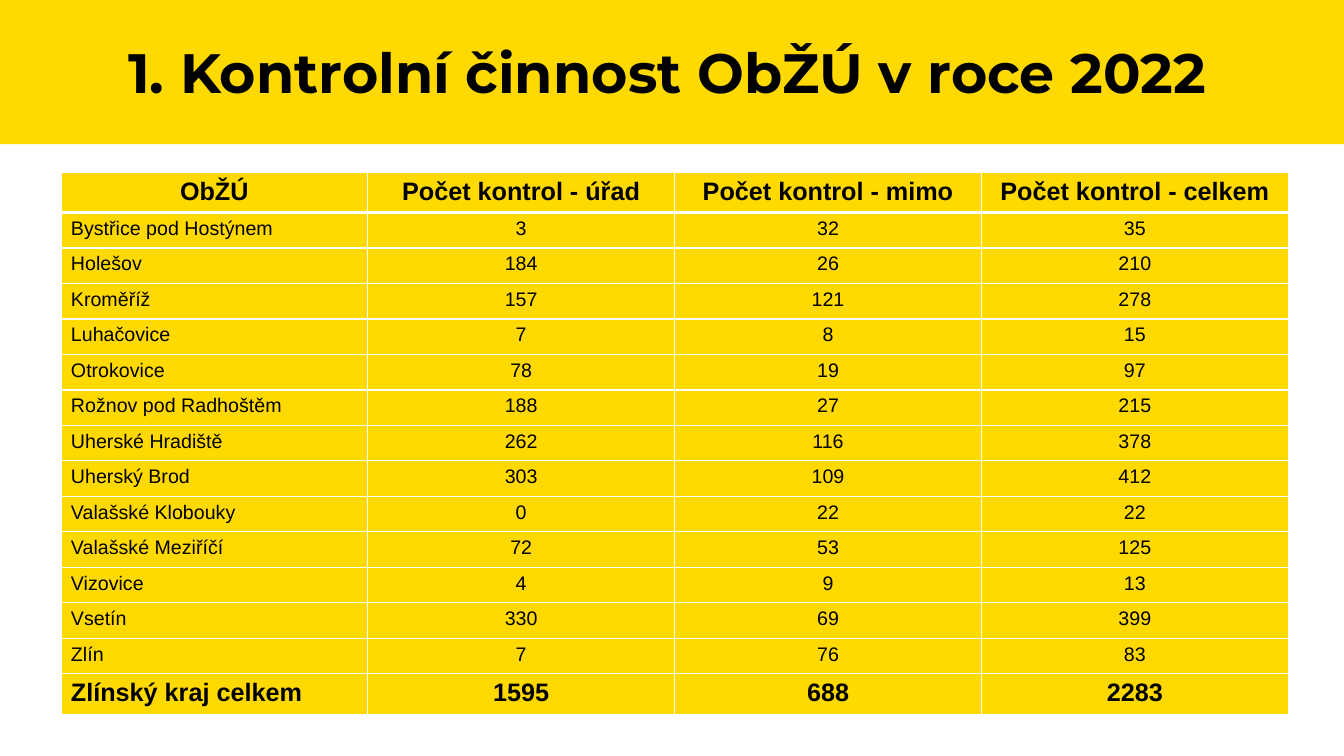
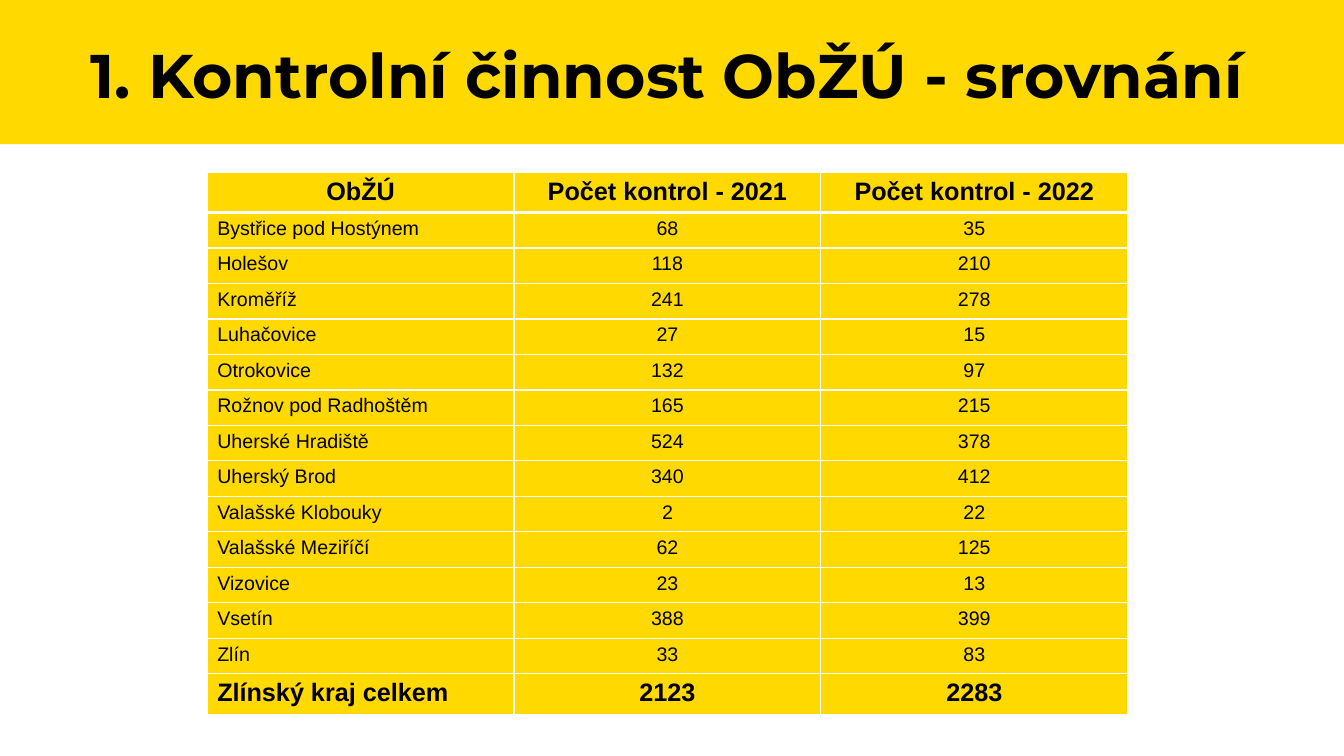
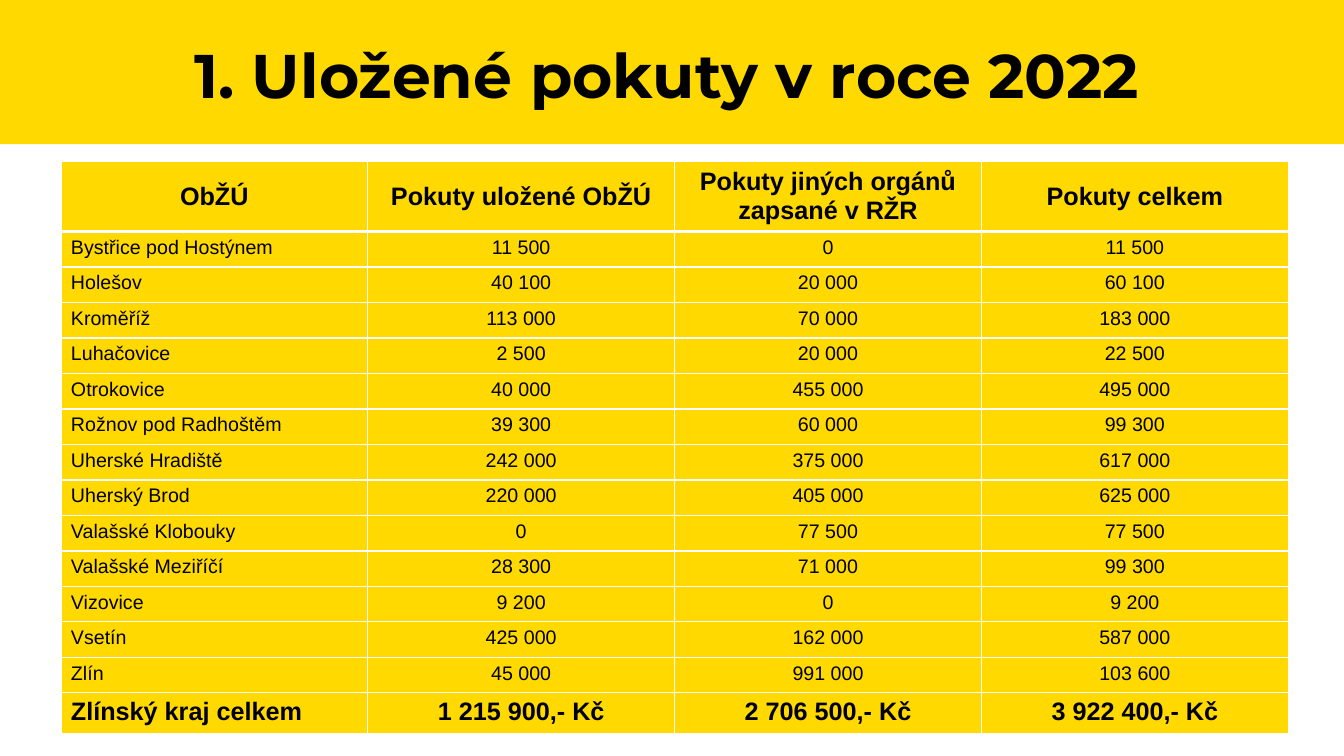
from lxml import etree
from pptx import Presentation
from pptx.dml.color import RGBColor
from pptx.enum.shapes import MSO_SHAPE
from pptx.enum.text import MSO_ANCHOR, PP_ALIGN
from pptx.oxml.ns import qn
from pptx.util import Pt

RECTANGLE = MSO_SHAPE.RECTANGLE
LEFT, CENTER = PP_ALIGN.LEFT, PP_ALIGN.CENTER
TOP, MIDDLE = MSO_ANCHOR.TOP, MSO_ANCHOR.MIDDLE

YELLOW = RGBColor(0xFF, 0xD9, 0x00)
BLACK = RGBColor(0x00, 0x00, 0x00)
WHITE = RGBColor(0xFF, 0xFF, 0xFF)

SLIDE_WIDTH, SLIDE_HEIGHT = 960, 540
COLUMN_WIDTH, ROW_HEIGHT = 219.2, 25.37
WIDE_LEFT, NARROW_LEFT = 43.5, 148
THIN, THICK = 1, 3

OFFICES = [
    "Bystřice pod Hostýnem", "Holešov", "Kroměříž", "Luhačovice", "Otrokovice",
    "Rožnov pod Radhoštěm", "Uherské Hradiště", "Uherský Brod",
    "Valašské Klobouky", "Valašské Meziříčí", "Vizovice", "Vsetín", "Zlín",
    "Zlínský kraj celkem",
]

# Each column: heading, one value per office, total
INSPECTIONS_2022 = ["35", "210", "278", "15", "97", "215", "378", "412", "22",
                    "125", "13", "399", "83", "2283"]
INSPECTIONS = [
    ["Počet kontrol - úřad", "3", "184", "157", "7", "78", "188", "262", "303",
     "0", "72", "4", "330", "7", "1595"],
    ["Počet kontrol - mimo", "32", "26", "121", "8", "19", "27", "116", "109",
     "22", "53", "9", "69", "76", "688"],
    ["Počet kontrol - celkem", *INSPECTIONS_2022],
]
COMPARISON = [
    ["Počet kontrol - 2021", "68", "118", "241", "27", "132", "165", "524",
     "340", "2", "62", "23", "388", "33", "2123"],
    ["Počet kontrol - 2022", *INSPECTIONS_2022],
]
FINES = [
    ["Pokuty uložené ObŽÚ", "11 500", "40 100", "113 000", "2 500", "40 000",
     "39 300", "242 000", "220 000", "0", "28 300", "9 200", "425 000",
     "45 000", "1 215 900,- Kč"],
    ["Pokuty jiných orgánů zapsané v RŽR", "0", "20 000", "70 000", "20 000",
     "455 000", "60 000", "375 000", "405 000", "77 500", "71 000", "0",
     "162 000", "991 000", "2 706 500,- Kč"],
    ["Pokuty celkem", "11 500", "60 100", "183 000", "22 500", "495 000",
     "99 300", "617 000", "625 000", "77 500", "99 300", "9 200", "587 000",
     "103 600", "3 922 400,- Kč"],
]


class Deck:
    """Holds the shared style and the current slide."""

    title_font, table_font = "Montserrat", "Arial"
    body_size, strong_size = 14, 18

    def __init__(self):
        self.presentation = Presentation()
        self.presentation.slide_width = Pt(SLIDE_WIDTH)
        self.presentation.slide_height = Pt(SLIDE_HEIGHT)
        self.slide = None

    def add_slide(self, title, title_size=44):
        blank = self.presentation.slide_layouts[6]
        self.slide = self.presentation.slides.add_slide(blank)
        self.band()
        self.title(title, title_size)

    def band(self):
        band = self.slide.shapes.add_shape(
            RECTANGLE, 0, 0, Pt(SLIDE_WIDTH), Pt(103))
        band.shadow.inherit = False
        band.fill.solid()
        band.fill.fore_color.rgb = YELLOW
        band.line.fill.background()

    def title(self, text, size):
        box = self.slide.shapes.add_textbox(Pt(33), Pt(29), Pt(887), Pt(73.5))
        frame = box.text_frame
        frame.word_wrap = True
        frame.vertical_anchor = TOP
        paragraph = frame.paragraphs[0]
        paragraph.line_spacing = 0.9
        self.add_text(paragraph, text, self.title_font, size, True, CENTER)

    def add_text(self, paragraph, text, font, size, bold, align):
        paragraph.alignment = align
        run = paragraph.add_run()
        run.text = text
        run.font.name = font
        run.font.size = Pt(size)
        run.font.bold = bold
        run.font.color.rgb = BLACK

    def borders(self, cell, top, bottom):
        properties = cell._tc.get_or_add_tcPr()
        widths = {"a:lnL": THIN, "a:lnR": THIN, "a:lnT": top, "a:lnB": bottom}
        for side, width in widths.items():
            line = etree.SubElement(properties, qn(side), w=str(Pt(width)))
            fill = etree.SubElement(line, qn("a:solidFill"))
            etree.SubElement(fill, qn("a:srgbClr"), val=str(WHITE))

    def table(self, left, top, columns, heading_anchor=TOP):
        columns = [["ObŽÚ", *OFFICES], *columns]
        rows = list(zip(*columns))
        last = len(rows) - 1
        table = self.slide.shapes.add_table(
            len(rows), len(columns), Pt(left), Pt(top),
            Pt(COLUMN_WIDTH * len(columns)), Pt(ROW_HEIGHT * len(rows))).table
        for column in table.columns:
            column.width = Pt(COLUMN_WIDTH)
        for r, values in enumerate(rows):
            table.rows[r].height = Pt(ROW_HEIGHT)
            strong = r in (0, last)
            for c, value in enumerate(values):
                cell = table.cell(r, c)
                # The heading is set off by a thick rule
                self.borders(cell, THICK if r == 1 else THIN,
                             THICK if r == 0 else THIN)
                cell.fill.solid()
                cell.fill.fore_color.rgb = YELLOW
                cell.vertical_anchor = heading_anchor if r == 0 else TOP
                self.add_text(cell.text_frame.paragraphs[0], value,
                              self.table_font,
                              self.strong_size if strong else self.body_size,
                              strong, LEFT if c == 0 and r > 0 else CENTER)


def main():
    deck = Deck()

    # Inspections in 2022
    deck.add_slide("1. Kontrolní činnost ObŽÚ v roce 2022", 39.6)
    deck.table(WIDE_LEFT, 123, INSPECTIONS)

    # Comparison of two years
    deck.add_slide("1. Kontrolní činnost ObŽÚ - srovnání")
    deck.table(NARROW_LEFT, 123, COMPARISON)

    # Fines in 2022
    deck.add_slide("1. Uložené pokuty v roce 2022")
    deck.table(WIDE_LEFT, 115, FINES, MIDDLE)

    deck.presentation.save("out.pptx")


if __name__ == "__main__":
    main()
